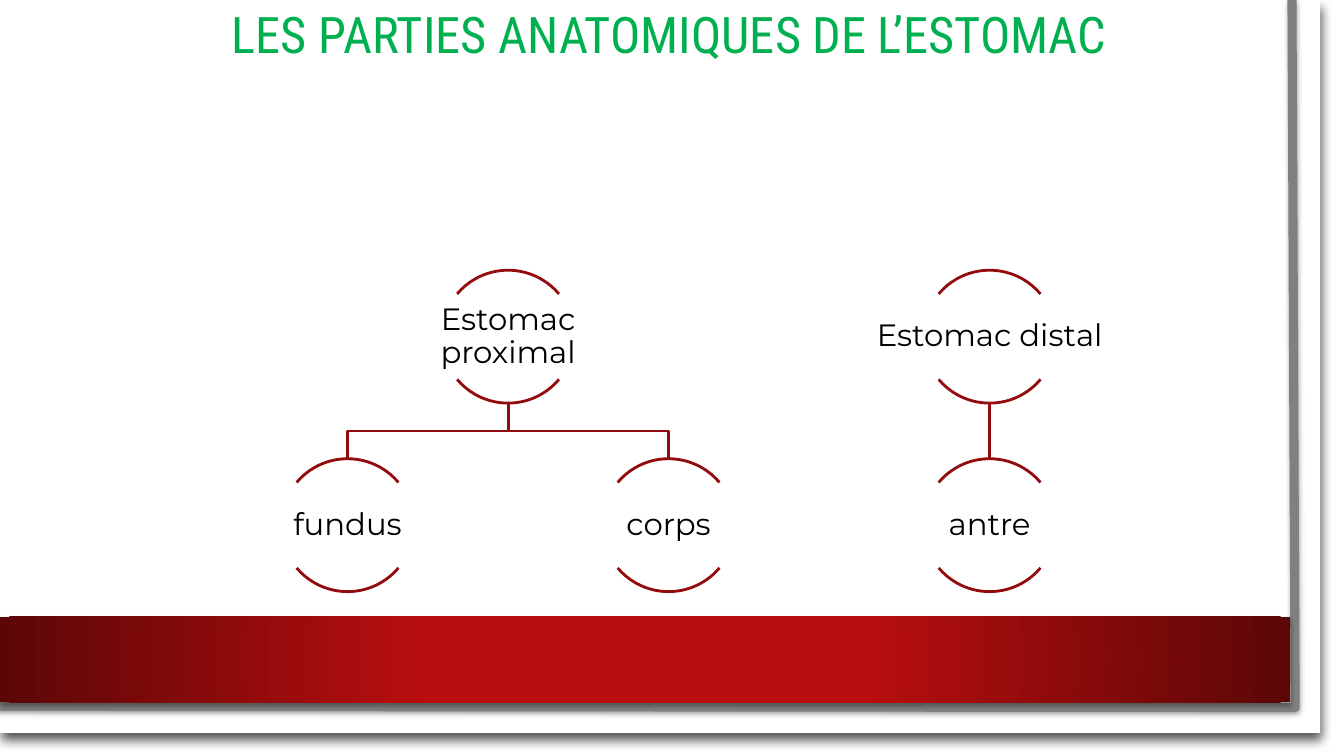
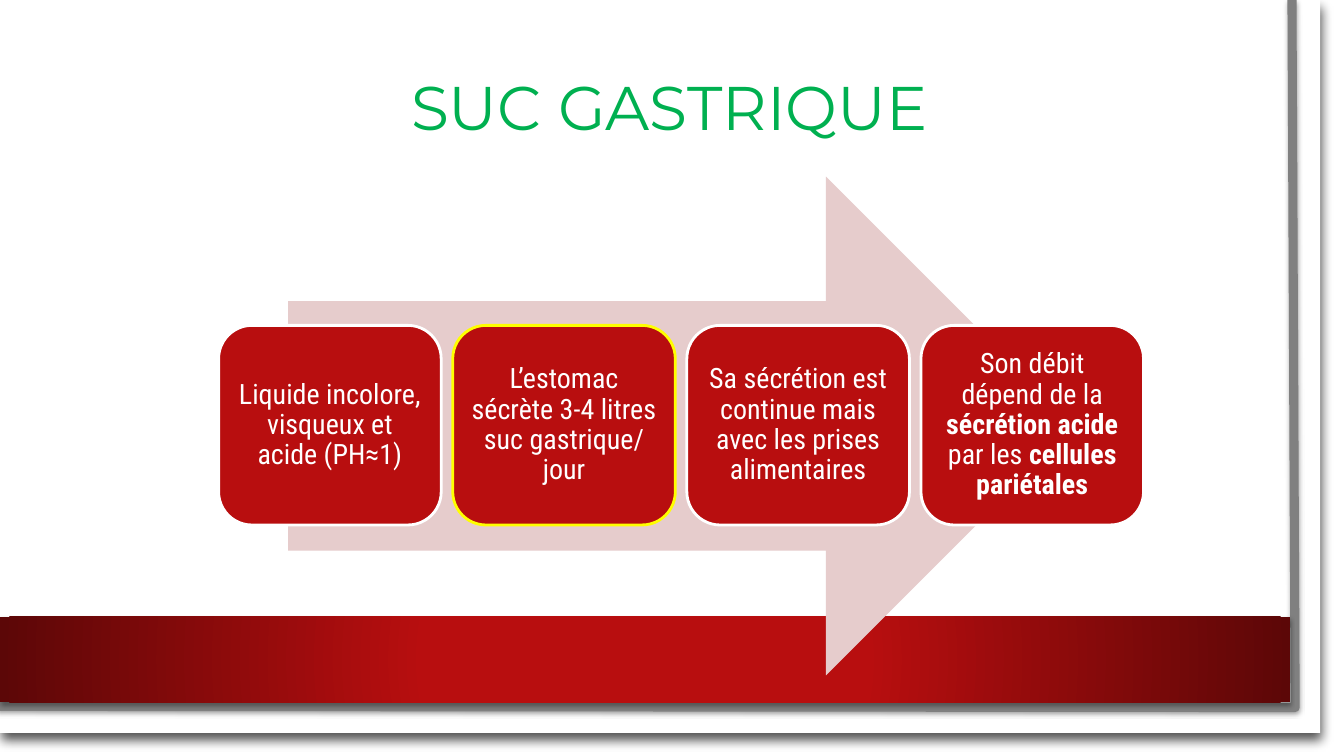
from lxml import etree
from pptx import Presentation
from pptx.dml.color import RGBColor
from pptx.enum.shapes import MSO_CONNECTOR as Connector, MSO_SHAPE as Preset
from pptx.enum.text import MSO_ANCHOR as Anchor, MSO_AUTO_SIZE as AutoSize, PP_ALIGN as Align
from pptx.oxml import parse_xml
from pptx.oxml.ns import nsdecls, qn
from pptx.util import Cm, Pt

COLORS = {
    "white": "FFFFFF", "black": "000000", "grey": "808080", "green": "00B050",
    "red": "B80E0F", "dark_red": "5C0707", "line_red": "930B0C",
    "pink": "E6CCCC", "yellow": "FFFF00",
}
HEADING, CONDENSED = "Montserrat", "Roboto Condensed"


def write_text(shape, text, font, size, color, margin=None):
    """Fill a shape with centred text; parts between ** are bold, \\n breaks the line."""
    frame = shape.text_frame
    frame.word_wrap = True
    frame.auto_size = AutoSize.NONE
    frame.vertical_anchor = Anchor.MIDDLE
    if margin is not None:
        frame.margin_left = frame.margin_right = Cm(margin)
        frame.margin_top = frame.margin_bottom = Cm(margin)
    paragraph = frame.paragraphs[0]
    paragraph.alignment = Align.CENTER
    paragraph.line_spacing = 0.9
    for part_index, part in enumerate(text.split("**")):
        for line_index, line in enumerate(part.split("\n")):
            if line_index:
                paragraph.add_line_break()
            if line:
                run = paragraph.add_run()
                run.text = line
                run.font.name = font
                run.font.size = Pt(size)
                run.font.bold = part_index % 2 == 1
                run.font.color.rgb = RGBColor.from_string(COLORS[color])


def style_shape(shape, fill=None, line=None, width=2, shadow=None):
    """Set fill and line; shadow is (opacity %, blur pt, distance pt, angle)."""
    if fill:
        shape.fill.solid()
        shape.fill.fore_color.rgb = RGBColor.from_string(COLORS[fill])
    else:
        shape.fill.background()
    if line:
        shape.line.color.rgb = RGBColor.from_string(COLORS[line])
        shape.line.width = Pt(width)
    else:
        shape.line.fill.background()
    shape.shadow.inherit = False
    if shadow:
        opacity, blur, distance, angle = shadow
        effects = shape.element.spPr.find(qn("a:effectLst"))
        effects.append(parse_xml(
            f'<a:outerShdw {nsdecls("a")} blurRad="{Pt(blur)}" dist="{Pt(distance)}" '
            f'dir="{angle * 60000}" algn="ctr" rotWithShape="0">'
            f'<a:srgbClr val="{COLORS["black"]}"><a:alpha val="{opacity * 1000}"/></a:srgbClr>'
            '</a:outerShdw>'))


presentation = Presentation()
presentation.slide_width = Cm(33.87)
presentation.slide_height = Cm(19.05)

slides = []
for title, top, font, size in [
    ("LES PARTIES ANATOMIQUES DE L’ESTOMAC", -0.66, CONDENSED, 36),
    ("SUC GASTRIQUE", 1.19, HEADING, 44),
]:
    slide = presentation.slides.add_slide(presentation.slide_layouts[5])
    shape = slide.shapes.title
    shape.left, shape.top, shape.width, shape.height = Cm(5.44), Cm(top), Cm(22.86), Cm(3.18)
    write_text(shape, title, font, size, "green")
    slides.append(slide)
anatomy_slide, juice_slide = slides

# Sheet, edge and band are drawn once, then moved to the slide master
shapes = anatomy_slide.shapes
sheet = shapes.add_shape(Preset.RECTANGLE, 0, 0, Cm(33.27), Cm(18.47))
style_shape(sheet, fill="white", shadow=(68, 7.8, 6, 73))

outline = shapes.build_freeform(Cm(32.56), 0)
outline.add_line_segments([(Cm(32.64), Cm(17.83)), (Cm(-0.08), Cm(17.8))], close=False)
edge = outline.convert_to_shape()
style_shape(edge, line="grey", width=6.5, shadow=(38, 3.1, 1.6, 90))

band = shapes.add_shape(Preset.RECTANGLE, 0, Cm(15.54), Cm(32.51), Cm(2.16))
style_shape(band, fill="red", shadow=(35, 3.1, 1.8, 90))
band_properties = band.element.spPr
band_properties.replace(band_properties.find(qn("a:solidFill")), parse_xml(
    f'<a:gradFill {nsdecls("a")} rotWithShape="1"><a:gsLst>'
    f'<a:gs pos="34000"><a:srgbClr val="{COLORS["red"]}"/></a:gs>'
    f'<a:gs pos="100000"><a:srgbClr val="{COLORS["dark_red"]}"/></a:gs></a:gsLst>'
    '<a:path path="circle"><a:fillToRect l="50000" t="50000" r="50000" b="50000"/></a:path>'
    '</a:gradFill>'))

master_tree = presentation.slide_master.shapes.element
for position, shape in enumerate([sheet, edge, band], start=2):
    master_tree.insert(position, shape.element)

# Slide 1: tree of the parts of the stomach
DIAMETER, LABEL_WIDTH, LABEL_HEIGHT = 3.35, 6.68, 2.13
PARENT_TOP, CHILD_TOP = 6.81, 11.56
PARENT_BOTTOM = PARENT_TOP + DIAMETER
BEND = (PARENT_BOTTOM + CHILD_TOP) / 2
columns = [8.76 + 8.09 * index for index in range(3)]
branches = [
    ("Estomac proximal", [("fundus", columns[0]), ("corps", columns[1])]),
    ("Estomac distal", [("antre", columns[2])]),
]

nodes = []
for parent, children in branches:
    center = sum(x for _, x in children) / len(children)
    nodes.append((parent, center, PARENT_TOP))
    for child, x in children:
        nodes.append((child, x, CHILD_TOP))
        if len(children) == 1:
            link = shapes.add_connector(
                Connector.STRAIGHT, Cm(center), Cm(PARENT_BOTTOM), Cm(x), Cm(CHILD_TOP))
            link.line.color.rgb = RGBColor.from_string(COLORS["line_red"])
            link.line.width = Pt(2)
            etree.SubElement(link.element.spPr, qn("a:effectLst"))
        else:
            elbow = shapes.build_freeform(Cm(center), Cm(PARENT_BOTTOM))
            elbow.add_line_segments(
                [(Cm(center), Cm(BEND)), (Cm(x), Cm(BEND)), (Cm(x), Cm(CHILD_TOP))], close=False)
            style_shape(elbow.convert_to_shape(), line="line_red")

for label, center, top in nodes:
    for start, end in [(132, 192), (24, 84)]:
        arc = shapes.add_shape(
            Preset.ARC, Cm(center - DIAMETER / 2), Cm(top), Cm(DIAMETER), Cm(DIAMETER))
        arc.adjustments[0], arc.adjustments[1] = start, end
        style_shape(arc, line="line_red")
    box = shapes.add_textbox(
        Cm(center - LABEL_WIDTH / 2), Cm(top + (DIAMETER - LABEL_HEIGHT) / 2),
        Cm(LABEL_WIDTH), Cm(LABEL_HEIGHT))
    write_text(box, label, HEADING, 22, "black", margin=0.05)

# Slide 2: cards on an arrow
shapes = juice_slide.shapes
arrow = shapes.add_shape(Preset.RIGHT_ARROW, Cm(7.26), Cm(4.45), Cm(19.84), Cm(12.57))
style_shape(arrow, fill="pink")

cards = [
    ("Liquide incolore, visqueux et acide (PH≈1)", "white"),
    ("L’estomac sécrète 3-4 litres suc gastrique/ jour", "yellow"),
    ("Sa sécrétion est continue mais\navec les prises alimentaires", "white"),
    ("Son débit dépend de la **sécrétion acide** par les **cellules pariétales**", "white"),
]
for index, (text, border) in enumerate(cards):
    card = shapes.add_shape(
        Preset.ROUNDED_RECTANGLE, Cm(5.51 + 5.9 * index), Cm(8.2), Cm(5.61), Cm(5.03))
    style_shape(card, fill="red", line=border)
    write_text(card, text, CONDENSED, 20, "white", margin=0.2)

presentation.save("out.pptx")
